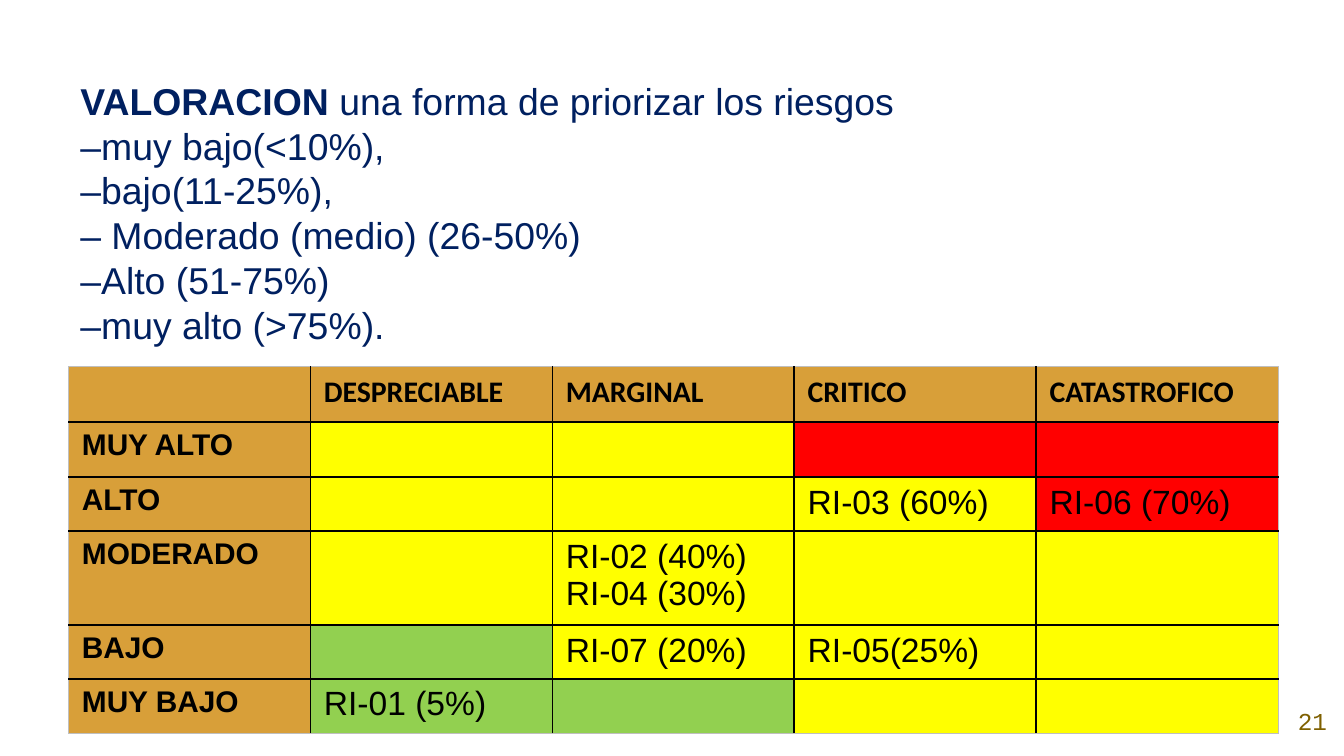
from lxml import etree
from pptx import Presentation
from pptx import util as u
from pptx.dml.color import RGBColor
from pptx.enum import text
from pptx.oxml import ns

NAVY = RGBColor(0x00, 0x20, 0x60)
BROWN = RGBColor(0x7F, 0x60, 0x00)
BLACK = RGBColor(0x00, 0x00, 0x00)
GREY = RGBColor(0xBF, 0xBF, 0xBF)
GOLD = RGBColor(0xD8, 0x9F, 0x39)
YELLOW = RGBColor(0xFF, 0xFF, 0x00)
RED = RGBColor(0xFF, 0x00, 0x00)
GREEN = RGBColor(0x92, 0xD0, 0x50)

LEVELS = [
    "muy bajo(<10%),",
    "bajo(11-25%),",
    " Moderado (medio) (26-50%)",
    "Alto (51-75%)",
    "muy alto (>75%).",
]
RISKS = [
    ["", "DESPRECIABLE", "MARGINAL", "CRITICO", "CATASTROFICO"],
    ["MUY ALTO", "", "", "", ""],
    ["ALTO", "", "", "RI-03 (60%)", "RI-06 (70%)"],
    ["MODERADO", "", "RI-02 (40%)\nRI-04 (30%)", "", ""],
    ["BAJO", "", "RI-07 (20%)", "RI-05(25%)", ""],
    ["MUY BAJO", "RI-01 (5%)", "", "", ""],
]
ROW_HEIGHTS = [0.41, 0.41, 0.29, 0.36, 0.36, 0.41]
SEVERITY = {(1, 3): RED, (1, 4): RED, (2, 4): RED,
            (4, 1): GREEN, (5, 1): GREEN, (5, 2): GREEN}


class Deck:
    """Holds the text style and the current slide."""

    def __init__(self):
        self.prs = Presentation()
        self.prs.slide_width = u.Inches(10)
        self.prs.slide_height = u.Inches(10) * 9 // 16
        self.s = self.prs.slides.add_slide(self.prs.slide_layouts[6])

    def style(self, p, size, color, name="Arial", bold=None):
        """Set the font of a paragraph."""
        p.font.size = u.Pt(size)
        p.font.name = name
        p.font.color.rgb = color
        p.font.bold = bold

    def textbox(self, x, y, w, h):
        """Add a wrapping text box and return its text frame."""
        sp = self.s.shapes.add_textbox(*map(u.Inches, (x, y, w, h)))
        sp.text_frame.word_wrap = True
        return sp.text_frame

    def scale(self, lead, rest, levels):
        """Add the heading line and the probability levels."""
        tf = self.textbox(0.5, 0.53, 9, 1.55)
        p = tf.paragraphs[0]
        r = p.add_run()
        r.text = lead
        r.font.bold = True
        p.add_run().text = rest
        for level in levels:
            tf.add_paragraph().text = f"–{level}"
        for p in tf.paragraphs:
            self.style(p, 20, NAVY)

    def page_number(self, number):
        """Add the page number in the lower right corner."""
        tf = self.textbox(9.53, 5.11, 0.47, 0.51)
        tf.margin_top = tf.margin_bottom = u.Inches(0.1)
        tf.vertical_anchor = text.MSO_ANCHOR.MIDDLE
        p = tf.paragraphs[0]
        p.text = number
        p.alignment = text.PP_ALIGN.CENTER
        self.style(p, 13, BROWN, "Courier New")

    def border(self, cell, side, color, width):
        """Draw one border of a table cell."""
        tag = ns.qn(f"a:ln{side}")
        ln = etree.SubElement(cell._tc.get_or_add_tcPr(), tag, w=str(u.Pt(width)))
        fill = etree.SubElement(ln, ns.qn("a:solidFill"))
        etree.SubElement(fill, ns.qn("a:srgbClr"), val=str(color))

    def matrix(self, rows, heights, fills):
        """Add the risk matrix with its headings and severity colours."""
        n, m = len(rows), len(rows[0])
        box = map(u.Inches, (0.51, 2.73, 9, 2.72))
        frame = self.s.shapes.add_table(n, m, *box)
        table = frame.table
        for col in table.columns:
            col.width = u.Inches(9 / m)
        for i, row in enumerate(rows):
            table.rows[i].height = u.Inches(heights[i])
            for j, label in enumerate(row):
                cell = table.cell(i, j)
                outer = {"L": j == 0, "R": j == m - 1, "T": i == 0, "B": i == n - 1}
                for side, edge in outer.items():
                    self.border(cell, side, *((GREY, 0.5) if edge else (BLACK, 1)))
                heading = i == 0 or j == 0
                cell.fill.solid()
                cell.fill.fore_color.rgb = GOLD if heading else fills.get((i, j), YELLOW)
                cell.text = label
                for p in cell.text_frame.paragraphs:
                    self.style(p, 18 if label and not heading else 16, BLACK,
                               "Calibri" if i == 0 else "Arial", heading)
                    if not label:
                        etree.SubElement(p._p, ns.qn("a:endParaRPr"), sz="1600")
        frame.height = u.Inches(2.72)


def main():
    """Build the risk valuation slide."""
    deck = Deck()
    deck.page_number("21")
    deck.scale("VALORACION ", "una forma de priorizar los riesgos", LEVELS)
    deck.matrix(RISKS, ROW_HEIGHTS, SEVERITY)
    deck.prs.save("out.pptx")


if __name__ == "__main__":
    main()
